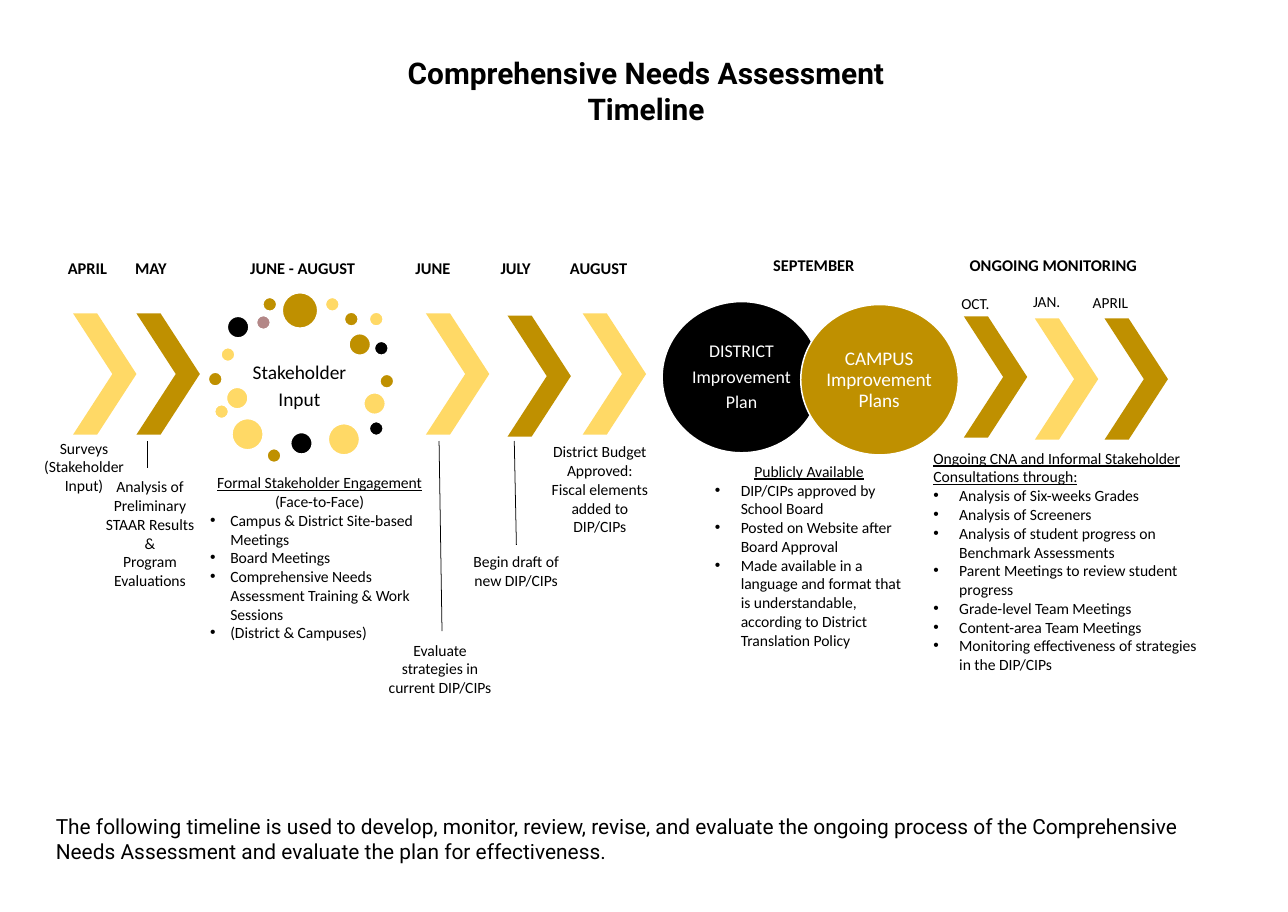
from lxml.etree import SubElement
from pptx import Presentation
from pptx.dml.color import RGBColor
from pptx.enum.shapes import MSO_CONNECTOR, MSO_SHAPE
from pptx.enum.text import MSO_ANCHOR, MSO_AUTO_SIZE, PP_ALIGN
from pptx.oxml.ns import qn
from pptx.util import Cm, Pt

COLOURS = {"black": "000000", "white": "FFFFFF", "pale": "FFD966",
           "gold": "BF9000", "mauve": "B38787"}

TITLE = ["Comprehensive Needs Assessment", "Timeline"]
CLOSING = ["The following timeline is used to develop, monitor, review, revise, and "
           "evaluate the ongoing process of the Comprehensive Needs Assessment and "
           "evaluate the plan for effectiveness."]

# All places below are in centimetres: left, top, width, height.
# Lists: placeholder index, place, side inset, bullet indent, centred, headings, items
LISTS = [
    (2, (4.72, 11.07, 5.69, 4.75), 0.25, 0.48, True,
     ["Formal Stakeholder Engagement", "(Face-to-Face)"],
     ["Campus & District Site-based Meetings", "Board Meetings",
      "Comprehensive Needs Assessment Training & Work Sessions",
      "(District & Campuses)"]),
    (3, (16.87, 10.8, 4.55, 4.7), 0.05, 0.61, True,
     ["Publicly Available"],
     ["DIP/CIPs approved by School Board", "Posted on Website after Board Approval",
      "Made available in a language and format that is understandable, "
      "according to District Translation Policy"]),
    (4, (21.84, 10.49, 6.99, 5.64), 0.25, 0.61, False,
     ["Ongoing CNA and Informal Stakeholder Consultations through:"],
     ["Analysis of Six-weeks Grades", "Analysis of Screeners",
      "Analysis of student progress on Benchmark Assessments",
      "Parent Meetings to review student progress", "Grade-level Team Meetings",
      "Content-area Team Meetings",
      "Monitoring effectiveness of strategies in the DIP/CIPs"]),
]

# Month labels: text, left, top, width
PERIODS = [
    ("APRIL", 1.09, 5.97, 1.96), ("MAY", 2.59, 5.97, 1.96),
    ("JUNE - AUGUST", 5.54, 5.97, 3.25), ("JUNE", 8.86, 5.97, 2.77),
    ("JULY", 10.82, 5.99, 2.77), ("AUGUST", 12.78, 5.99, 2.77),
    ("SEPTEMBER", 17.81, 5.92, 2.9), ("ONGOING MONITORING", 22.3, 5.92, 5.26),
]
CHECKPOINTS = [("OCT.", 22.07, 6.83, 2.03), ("JAN.", 23.83, 6.78, 1.88),
               ("APRIL", 25.3, 6.81, 1.96)]

STEPS = [
    ((0.84, 9.93, 2.3, 2.24), ["Surveys", "(Stakeholder", "Input)"]),
    ((2.18, 11.51, 2.74, 2.24),
     ["Analysis of Preliminary STAAR Results", "&", "Program", "Evaluations"]),
    ((9.02, 15.32, 2.79, 1.02), ["Evaluate strategies in", "current DIP/CIPs"]),
    ((10.97, 13, 2.49, 1.02), ["Begin draft of new DIP/CIPs"]),
    ((12.95, 11.07, 2.49, 1.02),
     ["District Budget Approved:", "Fiscal elements added to DIP/CIPs"]),
]
LEADERS = [(3.48, 10.44, 3.48, 11.07), (10.39, 10.44, 10.46, 14.94),
           (12.17, 10.44, 12.22, 12.9)]

CHEVRON_SIZE = (1.5, 2.87)
CHEVRONS = [(1.73, 7.42), (3.23, 7.42), (10.08, 7.42), (12.01, 7.47),
            (13.79, 7.42), (22.81, 7.49), (24.49, 7.54), (26.14, 7.54)]
CHEVRON_COLOURS = ["pale", "gold", "pale", "gold", "pale", "gold", "pale", "gold"]

# Dots around the stakeholder label: colour and diameter, then left, top of each
DOTS = {
    ("pale", 0.33): [(5.23, 8.23), (7.7, 7.04), (5.08, 9.58), (8.74, 7.39)],
    ("pale", 0.51): [(5.36, 9.17), (8.61, 9.3)],
    ("pale", 0.74): [(5.49, 9.91), (7.77, 10.03)],
    ("gold", 0.33): [(6.32, 10.62), (6.22, 7.04), (8.15, 7.39), (8.99, 8.86),
                     (4.93, 8.81)],
    ("gold", 0.51): [(8.26, 7.9)],
    ("gold", 0.84): [(6.68, 6.93)],
    ("black", 0.33): [(8.86, 8.08), (8.74, 9.98)],
    ("black", 0.51): [(5.38, 7.49), (6.88, 10.24)],
    ("mauve", 0.33): [(6.07, 7.47)],
}

PLANS = [
    ("black", (15.67, 7.14, 3.76, 3.58), (16.23, 7.67, 2.64, 2.54), 12,
     ["DISTRICT", "Improvement", "Plan"]),
    ("gold", (18.95, 7.21, 3.73, 3.56), (19.28, 7.75, 3.05, 2.51), 12.9,
     ["CAMPUS Improvement Plans"]),
]


def set_attributes(target, values):
    for name, value in values.items():
        setattr(target, name, value)


def colour(name):
    return RGBColor.from_string(COLOURS[name])


def set_bullet(paragraph, indent):
    """Give the paragraph a hanging bullet, or none when indent is 0."""
    properties = paragraph._p.get_or_add_pPr()
    properties.set("marL", str(Cm(indent)))
    properties.set("indent", str(-Cm(indent)))
    if indent:
        SubElement(properties, qn("a:buFont"), typeface="Arial")
        SubElement(properties, qn("a:buChar"), char="•")
    else:
        SubElement(properties, qn("a:buNone"))


def write(box, place, lines, size=10.5, font="Calibri", ink="black", bold=False,
          align=PP_ALIGN.CENTER, anchor=MSO_ANCHOR.TOP, inset=(0.25, 0.13),
          spacing=1.0, after=0):
    """Place the box, fill it with one paragraph per line and return the paragraphs."""
    set_attributes(box, dict(zip(("left", "top", "width", "height"), map(Cm, place))))
    across, down = map(Cm, inset)
    frame = box.text_frame
    set_attributes(frame, {
        "word_wrap": True, "auto_size": MSO_AUTO_SIZE.NONE, "vertical_anchor": anchor,
        "margin_left": across, "margin_right": across,
        "margin_top": down, "margin_bottom": down})
    frame.text = "\n".join(lines)
    for paragraph in frame.paragraphs:
        set_attributes(paragraph, {"alignment": align, "line_spacing": spacing,
                                   "space_before": Pt(0), "space_after": Pt(after)})
        set_bullet(paragraph, 0)
        for span in paragraph.runs:
            set_attributes(span.font, {"name": font, "size": Pt(size), "bold": bold})
            span.font.color.rgb = colour(ink)
    return frame.paragraphs


def add_text(page, place, lines, **style):
    box = page.shapes.add_textbox(*map(Cm, place))
    write(box, place, lines, **style)


def add_figure(page, kind, place, fill, outlined=True):
    shape = page.shapes.add_shape(kind, *map(Cm, place))
    shape.shadow.inherit = False
    shape.fill.solid()
    shape.fill.fore_color.rgb = colour(fill)
    if outlined:
        shape.line.color.rgb = colour("white")
        shape.line.width = Pt(1)
    else:
        shape.line.fill.background()
    return shape


def add_list(page, index, place, side, indent, centred, headings, items):
    align = PP_ALIGN.CENTER if centred else PP_ALIGN.LEFT
    paragraphs = write(page.placeholders[index], place, headings + items,
                       align=align, inset=(side, 0.13))
    paragraphs[0].runs[0].font.underline = True
    for paragraph in paragraphs[len(headings):]:
        paragraph.alignment = PP_ALIGN.LEFT
        properties = paragraph._p.get_or_add_pPr()
        properties.remove(properties.find(qn("a:buNone")))
        set_bullet(paragraph, indent)


def main():
    deck = Presentation()
    deck.slide_width, deck.slide_height = Cm(30.48), Cm(21.59)
    page = deck.slides.add_slide(deck.slide_layouts.get_by_name("Comparison"))

    write(page.shapes.title, (7.72, 1.17, 15.14, 1.96), TITLE,
          size=20, font="Roboto", bold=True)
    write(page.placeholders[1], (1.07, 19.13, 28.32, 1.45), CLOSING,
          size=14, font="Roboto", align=PP_ALIGN.LEFT)
    for entry in LISTS:
        add_list(page, *entry)

    for (fill, diameter), corners in DOTS.items():
        for corner in corners:
            add_figure(page, MSO_SHAPE.OVAL, (*corner, diameter, diameter), fill)
    middle = {"anchor": MSO_ANCHOR.MIDDLE, "inset": (0.05, 0.05)}
    add_text(page, (5.51, 8.48, 3.15, 1.35), ["Stakeholder", "Input"],
             size=13, spacing=0.9, after=4.5, **middle)

    for corner, fill in zip(CHEVRONS, CHEVRON_COLOURS):
        chevron = add_figure(page, MSO_SHAPE.CHEVRON, (*corner, *CHEVRON_SIZE),
                             fill, outlined=False)
        chevron.adjustments[0] = 0.62

    for fill, circle, place, size, lines in PLANS:
        add_figure(page, MSO_SHAPE.OVAL, circle, fill)
        add_text(page, place, lines, size=size, ink="white", spacing=0.9, after=4.2,
                 anchor=MSO_ANCHOR.MIDDLE, inset=(0, 0))

    for labels, style in ((PERIODS, {"size": 11, "bold": True}),
                          (CHECKPOINTS, {"size": 10.3})):
        for text, left, top, width in labels:
            add_text(page, (left, top, width, 0.74), [text], **style)

    for place, lines in STEPS:
        add_text(page, place, lines, **middle)
    for ends in LEADERS:
        leader = page.shapes.add_connector(MSO_CONNECTOR.STRAIGHT, *map(Cm, ends))
        leader.line.color.rgb = colour("black")
        leader.line.width = Pt(0.5)
        SubElement(leader._element.spPr, qn("a:effectLst"))

    deck.save("out.pptx")


if __name__ == "__main__":
    main()
